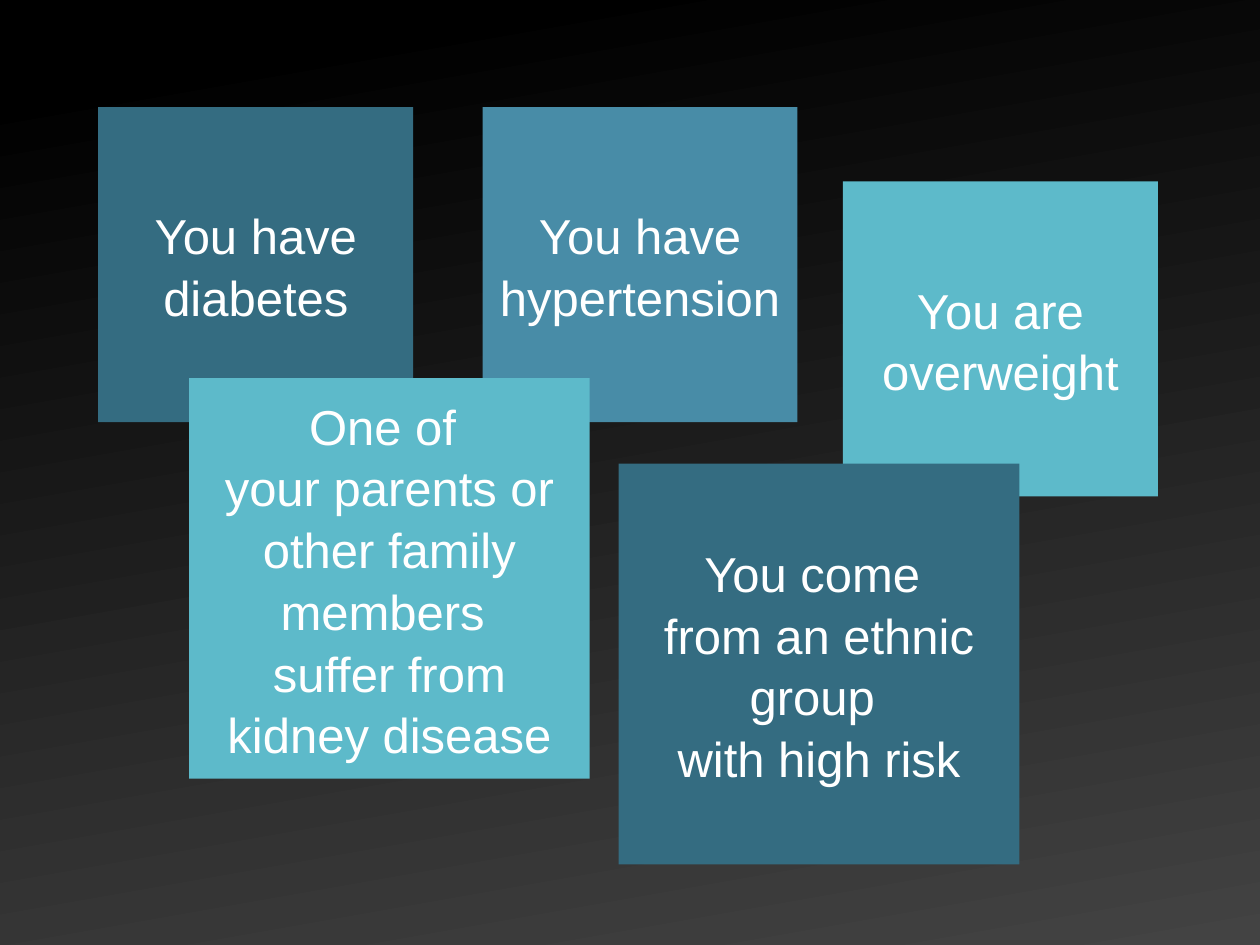
import pptx
import pptx.dml.color
import pptx.enum.shapes
import pptx.enum.text
import pptx.util
from pptx.util import Inches

DARK_TEAL = "346C81"
BLUE = "488CA7"
AQUA = "5DBACA"
SMALL = 2.5
LARGE = 3.18

RISK_FACTORS = [
    ("You have diabetes", 0.78, 0.85, SMALL, DARK_TEAL),
    ("You have hypertension", 3.83, 0.85, SMALL, BLUE),
    ("You are overweight", 6.69, 1.44, SMALL, AQUA),
    ("One of \nyour parents or other family members \nsuffer from kidney disease",
     1.5, 3, LARGE, AQUA),
    ("You come \nfrom an ethnic group \nwith high risk", 4.91, 3.68, LARGE, DARK_TEAL),
]


def set_color(color, hex_value):
    """Set a color format to a hex RGB value."""
    color.rgb = pptx.dml.color.RGBColor.from_string(hex_value)


def paint_background(slide):
    """Fill the slide with a steep black-to-gray gradient."""
    fill = slide.background.fill
    fill.gradient()
    fill.gradient_angle = 280
    for stop, (position, shade) in zip(
            fill.gradient_stops, [(0.08, "000000"), (1, "434343")]):
        stop.position = position
        set_color(stop.color, shade)


def add_risk_square(slide, risk, left, top, side, color):
    """Add a colored square that states one risk factor."""
    square = slide.shapes.add_shape(
        pptx.enum.shapes.MSO_SHAPE.RECTANGLE,
        Inches(left), Inches(top), Inches(side), Inches(side))
    square.shadow.inherit = False
    square.fill.solid()
    set_color(square.fill.fore_color, color)
    square.line.fill.background()

    frame = square.text_frame
    frame.word_wrap = True
    frame.vertical_anchor = pptx.enum.text.MSO_ANCHOR.MIDDLE
    statement = frame.paragraphs[0]
    statement.text = risk
    statement.alignment = pptx.enum.text.PP_ALIGN.CENTER
    statement.line_spacing = 1.05
    for run in statement.runs:
        run.font.name = "Arial"
        run.font.size = pptx.util.Pt(28)
        set_color(run.font.color, "FFFFFF")


def main():
    """Build the slide of kidney disease risk factors."""
    deck = pptx.Presentation()
    deck.slide_width = Inches(10)
    deck.slide_height = Inches(7.5)
    slide = deck.slides.add_slide(deck.slide_layouts[6])
    paint_background(slide)
    for risk_factor in RISK_FACTORS:
        add_risk_square(slide, *risk_factor)
    deck.save("out.pptx")


if __name__ == "__main__":
    main()
